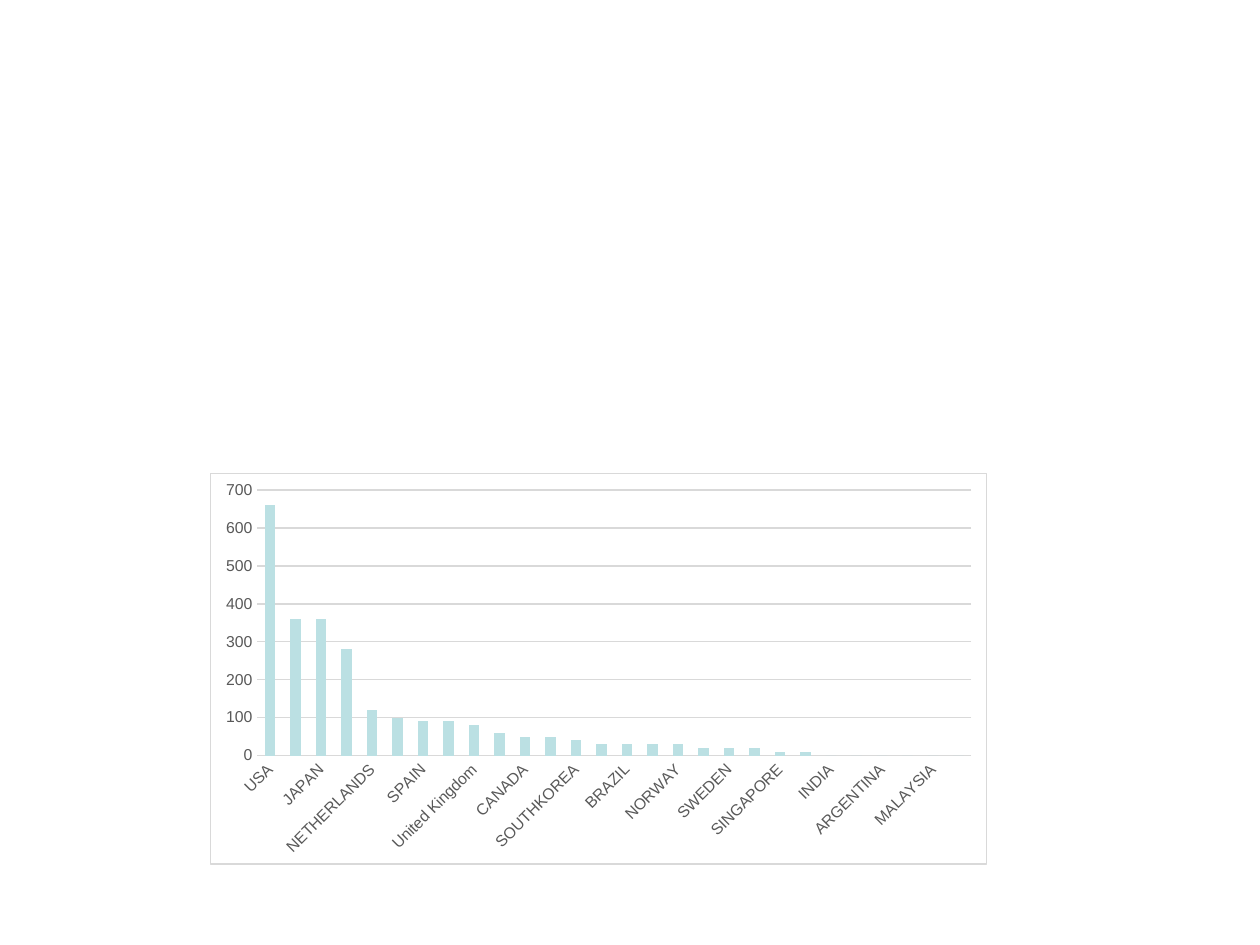
from dataclasses import dataclass

import pptx
import pptx.chart.data
import pptx.dml.color
import pptx.enum.chart
import pptx.oxml
import pptx.oxml.ns
import pptx.util


@dataclass(frozen=True)
class Theme:
    font: str = "Arial"
    chart_size: float = 10
    axis_size: float = 9
    line_width: float = 0.75
    chart_text: str = "000000"
    axis_text: str = "595959"
    line: str = "D9D9D9"
    bar: str = "BBE0E3"
    background: str = "FFFFFF"


@dataclass(frozen=True)
class Country:
    name: str
    value: int


@dataclass(frozen=True)
class Area:
    left: float
    top: float
    width: float
    height: float


THEME = Theme()
SLIDE_WIDTH = pptx.util.Inches(10)
SLIDE_HEIGHT = pptx.util.Inches(7.5)
CHART_AREA = Area(1 / 6, 1 / 2, 0.617, 0.415)
LABEL_ANGLE = -45
LABEL_STEP = 2

COUNTRIES = [
    Country("USA", 660),
    Country("FRANCE", 360),
    Country("JAPAN", 360),
    Country("GERMANY", 280),
    Country("NETHERLANDS", 120),
    Country("ITALY", 100),
    Country("SPAIN", 90),
    Country("SWITZERLAND", 90),
    Country("United Kingdom", 80),
    Country("FINLAND", 60),
    Country("CANADA", 50),
    Country("DENMARK", 50),
    Country("SOUTHKOREA", 40),
    Country("AUSTRIA", 30),
    Country("BRAZIL", 30),
    Country("NEWZEALAND", 30),
    Country("NORWAY", 30),
    Country("BELGIUM", 20),
    Country("SWEDEN", 20),
    Country("AUSTRALIA", 20),
    Country("SINGAPORE", 10),
    Country("IRELAND", 10),
    Country("INDIA", 0),
    Country("COLOMBIA", 0),
    Country("ARGENTINA", 0),
    Country("PORTUGAL", 0),
    Country("MALAYSIA", 0),
    Country("SAUDIARABIA", 0),
]


def color(value: str) -> pptx.dml.color.RGBColor:
    return pptx.dml.color.RGBColor.from_string(value)


def style_font(font, size: float, text_color: str) -> None:
    font.name = THEME.font
    font.size = pptx.util.Pt(size)
    font.color.rgb = color(text_color)


def style_axis(axis) -> None:
    axis.major_tick_mark = pptx.enum.chart.XL_TICK_MARK.NONE
    axis.minor_tick_mark = pptx.enum.chart.XL_TICK_MARK.NONE
    axis.format.line.fill.background()
    style_font(axis.tick_labels.font, THEME.axis_size, THEME.axis_text)


def slant_category_labels(axis) -> None:
    body = axis._element.find(pptx.oxml.ns.qn("c:txPr")).find(pptx.oxml.ns.qn("a:bodyPr"))
    body.set("rot", str(LABEL_ANGLE * 60000))
    body.set("vert", "horz")
    skip = pptx.oxml.parse_xml(
        f'<c:tickLblSkip {pptx.oxml.ns.nsdecls("c")} val="{LABEL_STEP}"/>'
    )
    axis._element.find(pptx.oxml.ns.qn("c:noMultiLvlLbl")).addprevious(skip)


def frame_chart(chart) -> None:
    frame = pptx.oxml.parse_xml(
        f'<c:spPr {pptx.oxml.ns.nsdecls("c", "a")}>'
        f'<a:solidFill><a:srgbClr val="{THEME.background}"/></a:solidFill>'
        f'<a:ln w="{pptx.util.Pt(THEME.line_width)}">'
        f'<a:solidFill><a:srgbClr val="{THEME.line}"/></a:solidFill></a:ln>'
        "</c:spPr>"
    )
    chart._chartSpace.find(pptx.oxml.ns.qn("c:chart")).addnext(frame)


def add_country_chart(slide, area: Area, countries: list[Country]) -> None:
    data = pptx.chart.data.CategoryChartData()
    data.categories = [country.name for country in countries]
    data.add_series("Series 1", [country.value for country in countries])
    chart = slide.shapes.add_chart(
        pptx.enum.chart.XL_CHART_TYPE.COLUMN_CLUSTERED,
        round(area.left * SLIDE_WIDTH),
        round(area.top * SLIDE_HEIGHT),
        round(area.width * SLIDE_WIDTH),
        round(area.height * SLIDE_HEIGHT),
        data,
    ).chart
    chart.has_title = False
    chart.has_legend = False
    style_font(chart.font, THEME.chart_size, THEME.chart_text)
    frame_chart(chart)

    for axis in (chart.category_axis, chart.value_axis):
        style_axis(axis)
    slant_category_labels(chart.category_axis)
    chart.value_axis.minimum_scale = 0
    chart.value_axis.maximum_scale = 700
    chart.value_axis.major_unit = 100
    gridline = chart.value_axis.major_gridlines.format.line
    gridline.color.rgb = color(THEME.line)
    gridline.width = pptx.util.Pt(THEME.line_width)

    plot = chart.plots[0]
    plot.gap_width = 150
    plot.vary_by_categories = False
    bars = plot.series[0].format.fill
    bars.solid()
    bars.fore_color.rgb = color(THEME.bar)


def main() -> None:
    presentation = pptx.Presentation()
    presentation.slide_width = SLIDE_WIDTH
    presentation.slide_height = SLIDE_HEIGHT
    slide = presentation.slides.add_slide(presentation.slide_layouts.get_by_name("Blank"))
    slide.background.fill.solid()
    slide.background.fill.fore_color.rgb = color(THEME.background)
    add_country_chart(slide, CHART_AREA, COUNTRIES)
    presentation.save("out.pptx")


if __name__ == "__main__":
    main()
